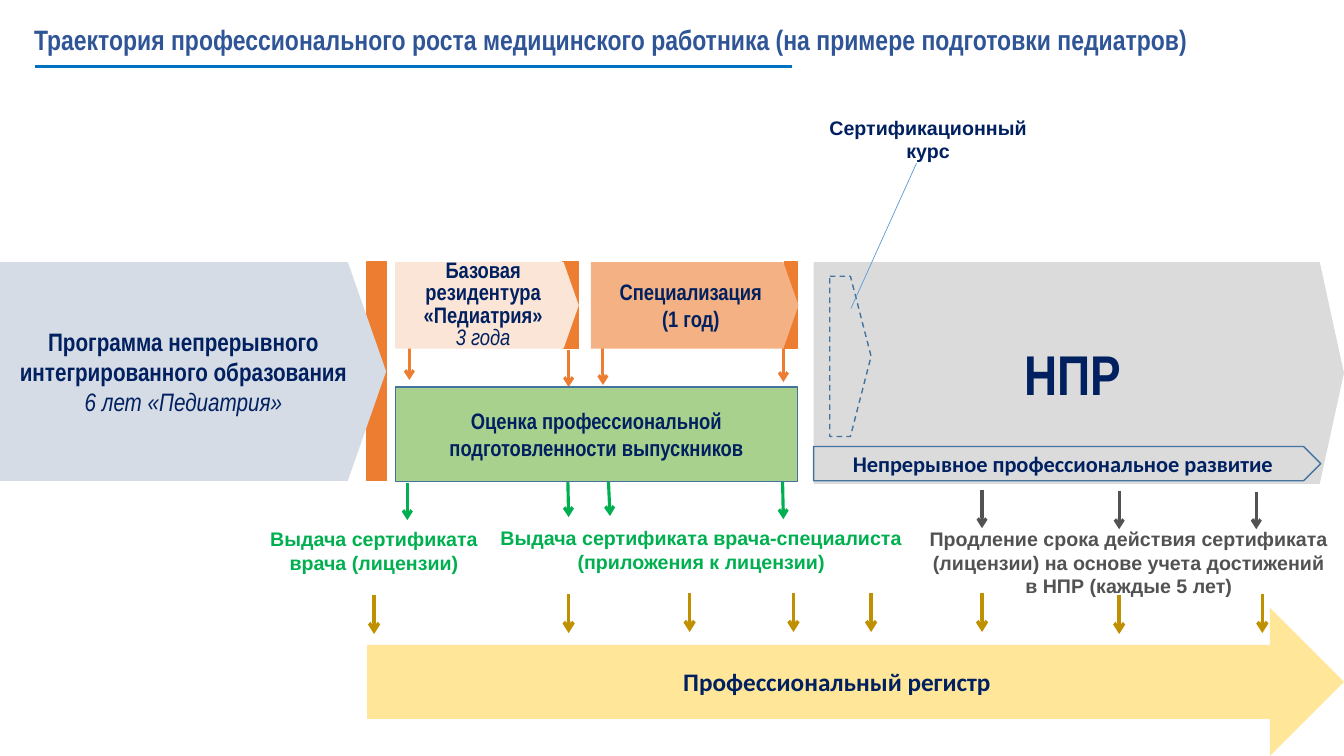
import pptx
import pptx.util
import pptx.dml.color
import pptx.enum.dml
import pptx.enum.shapes
import pptx.enum.text
import pptx.oxml.ns
import lxml.etree

Inches = pptx.util.Inches
Pt = pptx.util.Pt
KINDS = pptx.enum.shapes.MSO_SHAPE
ALIGN = pptx.enum.text.PP_ALIGN
ANCHOR = pptx.enum.text.MSO_ANCHOR

THEME = {
    "title": "2F5597", "rule": "0070C0", "navy": "002060", "outline": "43739E",
    "orange": "ED7D31", "green": "00B050", "gold": "BF9000", "grey": "525252",
    "leader": "5B9BD5", "program": "D6DCE5", "residency": "FBE5D6",
    "specialty": "F4B183", "development": "DBDBDB", "assessment": "A9D18E",
    "register": "FFE699",
    "narrow": "Arial Narrow", "sans": "Arial", "body": "Calibri",
    "label": 14, "step": 16, "heading": 18, "headline": 20, "huge": 40,
}

TITLE = "Траектория профессионального роста медицинского работника (на примере подготовки педиатров)"

END_STRIPS = [(7.78, 2.6, 0.13, 0.86), (3.64, 2.6, 0.19, 2.17), (5.58, 2.6, 0.16, 0.86)]

STEP_ARROWS = [
    ("orange", 2.25, [(4.06, 3.4, 4.06, 3.77), (5.64, 3.47, 5.64, 3.84),
                      (5.98, 3.45, 5.98, 3.82), (7.77, 3.41, 7.77, 3.79)]),
    ("green", 2.25, [(4.04, 4.79, 4.04, 5.16), (5.63, 4.67, 5.64, 5.13),
                     (6.03, 4.67, 6.05, 5.12), (7.76, 4.69, 7.77, 5.15)]),
    ("grey", 2.25, [(9.74, 4.86, 9.74, 5.24), (11.1, 4.87, 11.1, 5.25),
                    (12.46, 4.88, 12.46, 5.25)]),
    ("gold", 2.5, [(x, top, x, top + 0.39) for x, top in
                   [(3.71, 5.9), (5.64, 5.89), (6.84, 5.88), (7.87, 5.88),
                    (8.64, 5.88), (9.74, 5.88), (11.1, 5.9), (12.52, 5.89)]]),
]

STAGES = [
    dict(kind=KINDS.PENTAGON, at=(0, 2.6, 3.83, 2.17), point=0.175, fill="program",
         lines=["Программа непрерывного интегрированного образования"],
         duration="6 лет «Педиатрия»", size="heading"),
    dict(kind=KINDS.PENTAGON, at=(5.86, 2.6, 2.06, 0.86), point=0.175, fill="specialty",
         lines=["Специализация", "(1 год)"], size="step"),
    dict(kind=KINDS.RIGHT_ARROW, at=(3.64, 6.03, 9.69, 1.47), fill="register",
         lines=["Профессиональный регистр"], size="heading", font="body"),
    dict(kind=KINDS.PENTAGON, at=(8.07, 2.6, 5.26, 2.2), point=0.109, fill="development",
         lines=["НПР"], size="huge"),
    dict(kind=KINDS.PENTAGON, at=(8.23, 2.74, 0.41, 1.59), point=0.5, line="outline", dashed=True),
    dict(kind=KINDS.PENTAGON, at=(8.07, 4.43, 5.03, 0.34), point=0.5, line="outline",
         lines=["Непрерывное профессиональное развитие"], size="step", font="body", side_inset=0),
    dict(kind=KINDS.RECTANGLE, at=(3.92, 3.84, 3.99, 0.94), fill="assessment", line="outline",
         lines=["Оценка профессиональной подготовленности выпускников"], size="step"),
    dict(kind=KINDS.PENTAGON, at=(3.92, 2.6, 1.82, 0.86), point=0.175, fill="residency",
         lines=["Базовая резидентура «Педиатрия»"], duration="3 года", size="step", spacing=Pt(16)),
]

LABELS = [
    ((2.46, 5.18, 2.5, 0.57), "green", ["Выдача сертификата врача (лицензии)"]),
    ((4.83, 5.17, 4.25, 0.57), "green",
     ["Выдача сертификата врача-специалиста", "(приложения к лицензии)"]),
    ((8.07, 1.1, 2.27, 0.57), "navy", ["Сертификационный курс"]),
    ((9.07, 5.18, 4.25, 0.81), "grey",
     ["Продление срока действия сертификата (лицензии) на основе учета достижений в НПР (каждые 5 лет)"]),
]


def rgb(name):
    return pptx.dml.color.RGBColor.from_string(THEME[name])


def write(frame, lines, size, font="narrow", color="navy", duration=None,
          spacing=None, align=ALIGN.CENTER, anchor=ANCHOR.MIDDLE):
    frame.word_wrap = True
    frame.vertical_anchor = anchor
    entries = [(line, False) for line in lines]
    if duration:
        entries.append((duration, True))
    for index, (words, is_duration) in enumerate(entries):
        paragraph = frame.paragraphs[0] if index == 0 else frame.add_paragraph()
        paragraph.alignment = align
        if spacing:
            paragraph.line_spacing = spacing
        run = paragraph.add_run()
        run.text = words
        run.font.name = THEME[font]
        run.font.size = Pt(THEME[size])
        run.font.bold = not is_duration
        run.font.italic = is_duration
        run.font.color.rgb = rgb(color)


def add_stage(slide, kind, at, fill=None, line=None, point=None, dashed=False,
              lines=(), side_inset=0.1, **style):
    stage = slide.shapes.add_shape(kind, *map(Inches, at))
    stage.shadow.inherit = False
    if point is not None:
        stage.adjustments[0] = point
    if fill:
        stage.fill.solid()
        stage.fill.fore_color.rgb = rgb(fill)
    else:
        stage.fill.background()
    if line:
        stage.line.color.rgb = rgb(line)
        stage.line.width = Pt(1)
        if dashed:
            stage.line.dash_style = pptx.enum.dml.MSO_LINE.DASH
    else:
        stage.line.fill.background()
    if lines:
        stage.text_frame.margin_left = stage.text_frame.margin_right = Inches(side_inset)
        write(stage.text_frame, lines, **style)


def add_line(slide, ends, color, width, arrow=False):
    connector = slide.shapes.add_connector(
        pptx.enum.shapes.MSO_CONNECTOR.STRAIGHT, *map(Inches, ends))
    connector.line.color.rgb = rgb(color)
    connector.line.width = Pt(width)
    if arrow:
        lxml.etree.SubElement(connector.line._get_or_add_ln(),
                              pptx.oxml.ns.qn("a:tailEnd"), type="arrow")
    lxml.etree.SubElement(connector._element.spPr, pptx.oxml.ns.qn("a:effectLst"))


def add_text(slide, at, lines, **style):
    write(slide.shapes.add_textbox(*map(Inches, at)).text_frame, lines, **style)


def main():
    deck = pptx.Presentation()
    deck.slide_width, deck.slide_height = Inches(13.33), Inches(7.5)
    slide = deck.slides.add_slide(deck.slide_layouts[6])

    add_text(slide, (0.24, 0, 13.09, 0.82), [TITLE], size="headline", color="title",
             spacing=0.9, align=ALIGN.LEFT)
    add_line(slide, (0.35, 0.66, 7.86, 0.66), "rule", 2.25)
    for at in END_STRIPS:
        add_stage(slide, KINDS.CHEVRON, at, fill="orange", line="orange", point=0)
    for color, width, arrows in STEP_ARROWS:
        for ends in arrows:
            add_line(slide, ends, color, width, arrow=True)
    for stage in STAGES:
        add_stage(slide, **stage)
    add_line(slide, (8.44, 3.06, 9.09, 1.62), "leader", 0.5)
    for at, color, lines in LABELS:
        add_text(slide, at, lines, size="label", font="sans", color=color, anchor=ANCHOR.TOP)

    deck.save("out.pptx")


if __name__ == "__main__":
    main()
